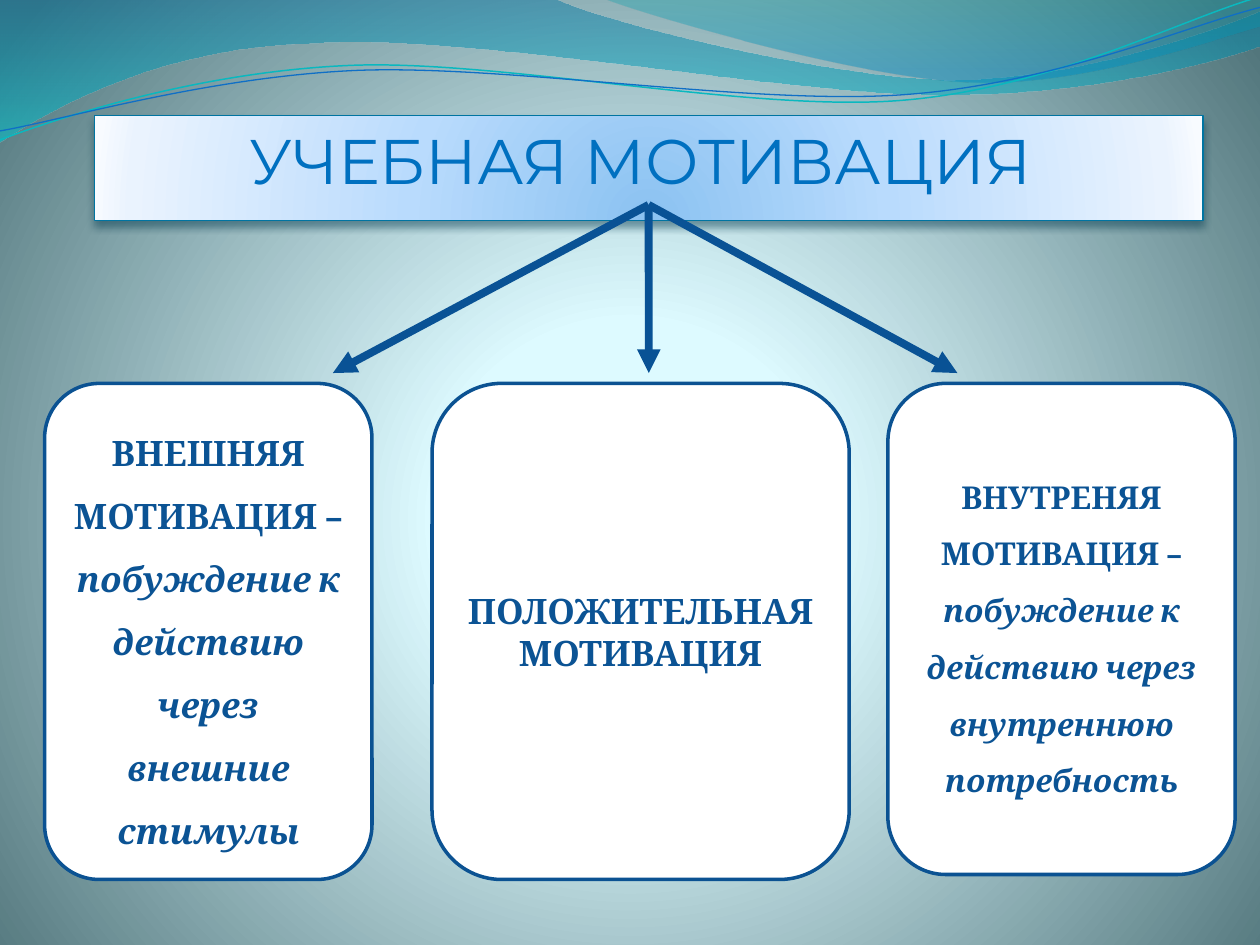
from lxml import etree
from pptx import Presentation
from pptx import util as u
from pptx.dml.color import RGBColor
from pptx.enum import shapes, text
from pptx.oxml import ns

WHITE = RGBColor(0xFF, 0xFF, 0xFF)
NAVY = RGBColor(0x0B, 0x52, 0x92)
INK = RGBColor(0x0B, 0x53, 0x94)
ARROW = RGBColor(0x09, 0x52, 0x95)
BLUE = RGBColor(0x00, 0x70, 0xC0)
EDGE = RGBColor(0x00, 0x74, 0xA1)
SHADE = RGBColor(0x00, 0x37, 0x4C)
TEAL = RGBColor(0x0A, 0xB8, 0xBF)
SEA = RGBColor(0x0F, 0x6F, 0xC6)

# Stops are (position, colour, opacity), all in percent.
BACK = [(0, RGBColor(0xDE, 0xFB, 0xFF), 100), (25, RGBColor(0xDD, 0xFA, 0xFF), 100),
        (100, RGBColor(0x52, 0x76, 0x7C), 100)]
BAND = [(0, RGBColor(0x8B, 0xC2, 0xF1), 100), (43, RGBColor(0xB9, 0xDB, 0xFD), 100),
        (93, RGBColor(0xEA, 0xF3, 0xFE), 100), (100, RGBColor(0xF8, 0xFB, 0xFF), 100)]
WIDE = [(0, EDGE, 45), (100, RGBColor(0x00, 0xC6, 0xCF), 55)]
SMALL = [(0, RGBColor(0x00, 0xA1, 0xA9), 30), (80, RGBColor(0x00, 0x8B, 0xBF), 45)]

# Each wave: start, then a point per straight step or three points per curve, in cm.
WAVES = [
    (WIDE, None, 0, (0, 0), [
        [(11.18, -0.03)],
        [(12.09, 0.43), (16.87, 1.6), (19.25, 1.6)],
        [(21.67, 1.6), (24.33, 0.66), (25.4, 0.23)],
        [(25.43, 0.91)],
        [(24.97, 1.12), (22.1, 1.93), (18.95, 1.91)],
        [(15.8, 1.91), (9.7, 0.71), (6.53, 0.86)],
        [(3.28, 0.91), (1.17, 2.11), (-0.03, 2.87)],
        [(0, 0)]]),
    (SMALL, None, 0, (12.17, -0.03), [
        [(12.93, 0.28), (17.32, 1.57), (19.53, 1.65)],
        [(21.74, 1.75), (24.41, 0.81), (25.4, 0.53)],
        [(25.4, 0)],
        [(12.17, -0.03)]]),
    (None, TEAL, 0.85, (0, 2.82), [
        [(1.22, 2.36), (4.01, 1.45), (7.04, 1.32)],
        [(10.03, 1.19), (15.06, 2.26), (18.11, 2.03)],
        [(21.16, 1.8), (23.83, 0.38), (25.35, -0.05)]]),
    (None, SEA, 0.75, (0, 2.64), [
        [(1.19, 2.44), (4.17, 1.55), (7.19, 1.42)],
        [(10.24, 1.3), (15.16, 2.13), (18.21, 1.91)],
        [(21.23, 1.7), (23.9, 0.53), (25.4, 0.15)]]),
]


def node(root, tag, **attrs):
    return etree.SubElement(root, ns.qn(tag), {k: str(v) for k, v in attrs.items()})


def tint(root, color, alpha):
    clr = node(root, "a:srgbClr", val=color)
    if alpha < 100:
        node(clr, "a:alpha", val=alpha * 1000)


def blend(root, stops, focus=None):
    """Swap the first solid fill in root for a gradient, round if a focus is given."""
    old = root.find(".//" + ns.qn("a:solidFill"))
    grad = etree.Element(ns.qn("a:gradFill"), rotWithShape="1")
    items = node(grad, "a:gsLst")
    for pos, color, alpha in stops:
        tint(node(items, "a:gs", pos=pos * 1000), color, alpha)
    if focus:
        ring = node(grad, "a:path", path="circle")
        node(ring, "a:fillToRect", **{k: v * 1000 for k, v in zip("ltrb", focus)})
    else:
        node(grad, "a:lin", ang=5400000, scaled=1)
    old.getparent().replace(old, grad)


def bend(shape, steps):
    """Turn each run of three straight segments that stands for a curve into one."""
    lines = iter(list(shape.element.iter(ns.qn("a:lnTo"))))
    for step in steps:
        group = [next(lines) for _ in step]
        if len(group) == 3:
            arc = etree.Element(ns.qn("a:cubicBezTo"))
            group[0].addprevious(arc)
            for line in group:
                arc.append(line[0])
                line.getparent().remove(line)


class Deck:
    face = "Cambria"
    head = "Montserrat"

    def __init__(self):
        self.prs = Presentation()
        self.prs.slide_width, self.prs.slide_height = u.Cm(25.4), u.Cm(19.05)
        self.slide = self.prs.slides.add_slide(self.prs.slide_layouts[5])
        self.slide.background.fill.solid()
        blend(self.slide.element, BACK, (10, 110, 10, 100))

    def font(self, run, size, color, name):
        run.font.size, run.font.name = u.Pt(size), name
        run.font.color.rgb = color

    def wave(self, stops, color, width, start, steps):
        form = self.slide.shapes.build_freeform(*map(u.Cm, start))
        form.add_line_segments([(u.Cm(x), u.Cm(y)) for step in steps for x, y in step],
                               close=bool(stops))
        shape = form.convert_to_shape()
        bend(shape, steps)
        shape.shadow.inherit = False
        if stops:
            shape.fill.solid()
            blend(shape.element, stops)
            shape.line.fill.background()
        else:
            shape.fill.background()
            shape.line.color.rgb, shape.line.width = color, u.Pt(width)

    def title(self, words, left, top, width, height):
        shape = self.slide.shapes.title
        shape.left, shape.top = u.Cm(left), u.Cm(top)
        shape.width, shape.height = u.Cm(width), u.Cm(height)
        shape.fill.solid()
        blend(shape.element, BAND, (50, 130, 50, -30))
        shape.line.color.rgb, shape.line.width = EDGE, u.Pt(0.75)
        shape.shadow.inherit = False
        glow = node(shape.element.spPr.find(ns.qn("a:effectLst")), "a:outerShdw",
                    blurRad=u.Pt(4.5), dist=u.Pt(3), dir=5400000, rotWithShape=0)
        tint(glow, SHADE, 48)
        frame = shape.text_frame
        frame.text = words
        frame.auto_size = text.MSO_AUTO_SIZE.SHAPE_TO_FIT_TEXT
        frame.vertical_anchor = text.MSO_ANCHOR.TOP
        para = frame.paragraphs[0]
        para.alignment, para.space_before = text.PP_ALIGN.CENTER, u.Pt(0)
        self.font(para.runs[0], 36, BLUE, self.head)
        return shape

    def card(self, left, width, height, size, space, paras):
        """Add a rounded box; paras hold runs of (words, italic)."""
        shape = self.slide.shapes.add_shape(
            shapes.MSO_SHAPE.ROUNDED_RECTANGLE,
            u.Cm(left), u.Cm(7.73), u.Cm(width), u.Cm(height))
        shape.shadow.inherit = False
        shape.fill.solid()
        shape.fill.fore_color.rgb = WHITE
        shape.line.color.rgb, shape.line.width = NAVY, u.Pt(2)
        frame = shape.text_frame
        frame.word_wrap = True
        frame.vertical_anchor = text.MSO_ANCHOR.MIDDLE
        for i, runs in enumerate(paras):
            para = frame.add_paragraph() if i else frame.paragraphs[0]
            para.alignment, para.line_spacing = text.PP_ALIGN.CENTER, space
            for words, slant in runs:
                run = para.add_run()
                run.text = words
                self.font(run, size, INK, self.face)
                run.font.bold, run.font.italic = True, slant

    def arrow(self, root, x, y):
        """Add an arrow from the bottom middle of root to a point."""
        line = self.slide.shapes.add_connector(
            shapes.MSO_CONNECTOR.STRAIGHT, 0, 0, u.Cm(x), u.Cm(y))
        line.begin_connect(root, 2)
        line.line.color.rgb, line.line.width = ARROW, u.Pt(4.5)
        node(line.element.spPr.find(ns.qn("a:ln")), "a:tailEnd", type="triangle")
        node(line.element.spPr, "a:effectLst")


def main():
    deck = Deck()
    for wave in WAVES:
        deck.wave(*wave)
    title = deck.title("УЧЕБНАЯ МОТИВАЦИЯ ", 1.9, 2.33, 22.35, 1.8)
    deck.card(0.9, 6.6, 10, 20, 1.5, [
        [("ВНЕШНЯЯ МОТИВАЦИЯ –", False)],
        [("побуждение к действию через внешние стимулы", True)]])
    deck.card(17.9, 7, 9.9, 18, 1.5, [
        [("ВНУТРЕНЯЯ МОТИВАЦИЯ – ", False),
         ("побуждение к действию через внутреннюю потребность", True)]])
    for x in (6.71, 19.3):
        deck.arrow(title, x, 7.52)
    deck.card(8.71, 8.41, 10, 20, 1, [[("ПОЛОЖИТЕЛЬНАЯ МОТИВАЦИЯ", False)]])
    deck.arrow(title, 13.08, 7.52)
    deck.prs.save("out.pptx")


if __name__ == "__main__":
    main()
